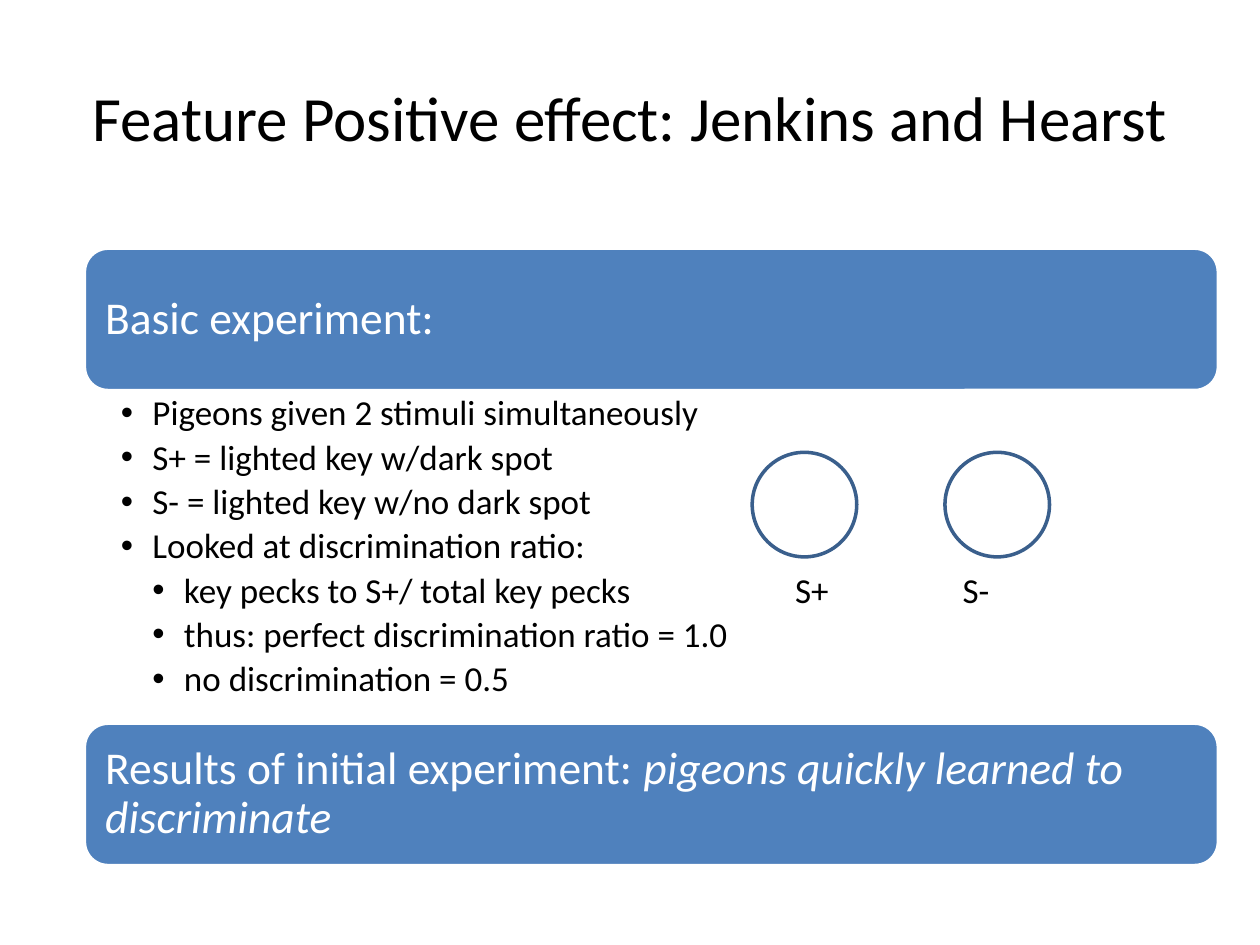
from dataclasses import dataclass

from lxml import etree
from pptx import Presentation
from pptx.dml.color import RGBColor
from pptx.enum import shapes, text
from pptx.oxml import ns
from pptx.util import Inches, Pt


@dataclass(frozen=True)
class Theme:
    font: str = "Calibri"
    black: RGBColor = RGBColor(0, 0, 0)
    white: RGBColor = RGBColor(255, 255, 255)
    panel: RGBColor = RGBColor(0x4F, 0x81, 0xBD)
    outline: RGBColor = RGBColor(0x3A, 0x5F, 0x8C)
    title_size: int = 36
    panel_size: int = 26
    list_size: int = 20
    line_width: int = 2


THEME = Theme()

# Level and text of each list item
ITEMS = [
    (1, "Pigeons given 2 stimuli simultaneously"),
    (1, "S+ = lighted key w/dark spot"),
    (1, "S- = lighted key w/no dark spot"),
    (1, "Looked at discrimination ratio:"),
    (2, "key pecks to S+/ total key pecks\tS+\tS-"),
    (2, "thus: perfect discrimination ratio = 1.0"),
    (2, "no discrimination = 0.5"),
]
INDENT = 0.25
KEY_LABEL_TABS = (5.35, 6.68)


def place(shape, left, top, width, height):
    shape.left, shape.top = Inches(left), Inches(top)
    shape.width, shape.height = Inches(width), Inches(height)


def set_insets(frame, left, top, right, bottom):
    frame.margin_left, frame.margin_top = Inches(left), Inches(top)
    frame.margin_right, frame.margin_bottom = Inches(right), Inches(bottom)
    frame.word_wrap = True
    frame.auto_size = text.MSO_AUTO_SIZE.NONE


def add_run(paragraph, words, size, color, italic=False):
    run = paragraph.add_run()
    run.text = words
    run.font.name = THEME.font
    run.font.size = Pt(size)
    run.font.color.rgb = color
    run.font.italic = italic


def add_title(slide, words):
    title = slide.shapes.title
    place(title, 0.5, 0.3, 9, 1.25)
    title.text_frame.vertical_anchor = text.MSO_ANCHOR.MIDDLE
    paragraph = title.text_frame.paragraphs[0]
    paragraph.alignment = text.PP_ALIGN.CENTER
    add_run(paragraph, words, THEME.title_size, THEME.black)


def set_bullet(paragraph, level):
    properties = paragraph._p.get_or_add_pPr()
    properties.set("marL", str(Inches(INDENT * level)))
    properties.set("indent", str(-Inches(INDENT)))
    etree.SubElement(properties, ns.qn("a:buFont"), typeface="Arial")
    etree.SubElement(properties, ns.qn("a:buChar"), char="•")


def set_tabs(paragraph, positions):
    properties = paragraph._p.get_or_add_pPr()
    tabs = etree.SubElement(properties, ns.qn("a:tabLst"))
    for position in positions:
        etree.SubElement(tabs, ns.qn("a:tab"), pos=str(Inches(position)), algn="l")


def add_list(slide, items):
    body = slide.placeholders[1]
    place(body, 0.67, 3.1, 9, 2.65)
    frame = body.text_frame
    set_insets(frame, 0.29, 0.04, 0.2, 0.04)
    frame.vertical_anchor = text.MSO_ANCHOR.TOP
    for index, (level, words) in enumerate(items):
        paragraph = frame.add_paragraph() if index else frame.paragraphs[0]
        paragraph.level = level
        paragraph.line_spacing = 0.9
        paragraph.space_before = Pt(0)
        paragraph.space_after = Pt(3.7)
        set_bullet(paragraph, level)
        if "\t" in words:
            set_tabs(paragraph, KEY_LABEL_TABS)
        add_run(paragraph, words, THEME.list_size, THEME.black)


def add_shape(slide, kind, left, top, width, height, line):
    shape = slide.shapes.add_shape(
        kind, Inches(left), Inches(top), Inches(width), Inches(height))
    shape.shadow.inherit = False
    shape.line.color.rgb = line
    shape.line.width = Pt(THEME.line_width)
    return shape


def add_key(slide, left):
    key = add_shape(slide, shapes.MSO_SHAPE.OVAL, left, 3.59, 0.83, 0.83, THEME.outline)
    key.fill.background()


def add_panel(slide, top, runs):
    panel = add_shape(
        slide, shapes.MSO_SHAPE.ROUNDED_RECTANGLE, 0.67, top, 9, 1.13, THEME.white)
    panel.fill.solid()
    panel.fill.fore_color.rgb = THEME.panel
    frame = panel.text_frame
    set_insets(frame, 0.11, 0.11, 0.11, 0.11)
    frame.vertical_anchor = text.MSO_ANCHOR.MIDDLE
    paragraph = frame.paragraphs[0]
    paragraph.alignment = text.PP_ALIGN.LEFT
    paragraph.line_spacing = 0.9
    for words, italic in runs:
        add_run(paragraph, words, THEME.panel_size, THEME.white, italic)


def main():
    presentation = Presentation()
    presentation.slide_width, presentation.slide_height = Inches(10), Inches(7.5)
    slide = presentation.slides.add_slide(presentation.slide_layouts[1])

    # Title and experiment details
    add_title(slide, "Feature Positive effect: Jenkins and Hearst")
    add_list(slide, ITEMS)

    # The two pecking keys
    for left in (5.97, 7.5):
        add_key(slide, left)

    # Heading panels
    add_panel(slide, 1.97, [("Basic experiment:", False)])
    add_panel(slide, 5.74, [
        ("Results of initial experiment: ", False),
        ("pigeons quickly learned to discriminate", True),
    ])

    presentation.save("out.pptx")


if __name__ == "__main__":
    main()
